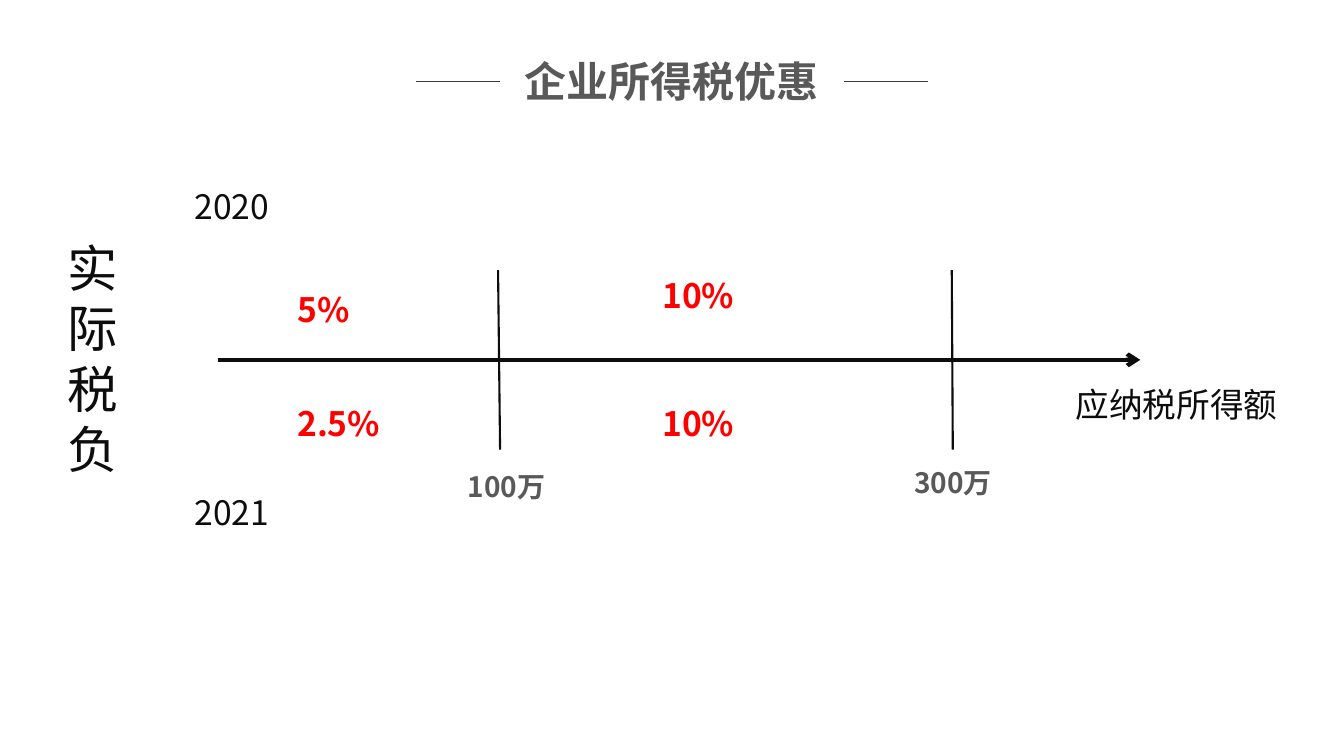
from lxml import etree
from pptx import Presentation
from pptx.dml.color import RGBColor
from pptx.enum.shapes import MSO_CONNECTOR
from pptx.enum.text import MSO_ANCHOR, MSO_AUTO_SIZE, PP_ALIGN
from pptx.oxml.ns import qn
from pptx.util import Inches, Pt

STRAIGHT = MSO_CONNECTOR.STRAIGHT
TOP = MSO_ANCHOR.TOP
NO_AUTOFIT = MSO_AUTO_SIZE.NONE
LEFT, CENTER = PP_ALIGN.LEFT, PP_ALIGN.CENTER

FONT = "Noto Sans CJK SC"
COLORS = {"ink": "0D0D0D", "heading": "595959", "rule": "3B3838", "rate": "FF0000"}

# Content: lengths in inches
SLIDE_W, SLIDE_H = 13.33, 7.5
HEADING = "企业所得税优惠"
BURDEN = "实际税负"
INCOME = "应纳税所得额"
YEARS = [("2020", 1.8), ("2021", 4.83)]  # label, top
THRESHOLDS = [  # label, left, top, tick top x, tick bottom x
    ("100万", 4.54, 4.61, 4.94, 4.96),
    ("300万", 8.97, 4.57, 9.44, 9.45),
]
RATES = [  # left of the income band, then (rate, top) for each year
    (2.85, [("5%", 2.82), ("2.5%", 3.95)]),
    (6.47, [("10%", 2.68), ("10%", 3.95)]),
]

HEADING_W, HEADING_H, HEADING_TOP = 3.15, 0.61, 0.5
RULE_W, RULE_GAP = 0.83, 0.13
AXIS_START, AXIS_END, AXIS_Y = 2.16, 11.31, 3.57
TICK_REACH = 0.89
LABEL_W, LABEL_H = 1.33, 0.5


def write(shape, text, size=24, color="ink", bold=False, align=LEFT, wrap=True):
    frame = shape.text_frame
    frame.word_wrap = wrap
    frame.auto_size = NO_AUTOFIT
    frame.vertical_anchor = TOP
    paragraph = frame.paragraphs[0]
    paragraph.alignment = align
    run = paragraph.add_run()
    run.text = text
    font = run.font
    font.size, font.bold, font.name = Pt(size), bold, FONT
    font.color.rgb = RGBColor.from_string(COLORS[color])
    etree.SubElement(run.font._element, qn("a:ea"), typeface=FONT)


def label(slide, text, left, top, width=LABEL_W, height=LABEL_H, **style):
    box = slide.shapes.add_textbox(Inches(left), Inches(top), Inches(width), Inches(height))
    write(box, text, **style)


def line(slide, start, end, color="ink", width=1.5, arrow=False):
    connector = slide.shapes.add_connector(STRAIGHT, *map(Inches, start + end))
    connector.line.color.rgb = RGBColor.from_string(COLORS[color])
    connector.line.width = Pt(width)
    if arrow:
        etree.SubElement(connector.line._get_or_add_ln(), qn("a:tailEnd"), type="arrow")
    etree.SubElement(connector._element.spPr, qn("a:effectLst"))


def add_heading(slide):
    left = (SLIDE_W - HEADING_W) / 2
    title = slide.shapes.title
    title.left, title.top = Inches(left), Inches(HEADING_TOP)
    title.width, title.height = Inches(HEADING_W), Inches(HEADING_H)
    write(title, HEADING, size=30, color="heading", bold=True, align=CENTER, wrap=False)
    rule_y = HEADING_TOP + HEADING_H / 2
    for start in (left - RULE_GAP - RULE_W, left + HEADING_W + RULE_GAP):
        line(slide, (start, rule_y), (start + RULE_W, rule_y), color="rule", width=0.5)


def add_axis(slide):
    line(slide, (AXIS_START, AXIS_Y), (AXIS_END, AXIS_Y), width=3, arrow=True)
    label(slide, INCOME, 10.57, 3.76, width=2.25)
    for text, left, top, upper_x, lower_x in THRESHOLDS:
        line(slide, (upper_x, AXIS_Y - TICK_REACH), (lower_x, AXIS_Y + TICK_REACH))
        label(slide, text, left, top, height=0.44, size=20, color="heading", bold=True)


def main():
    deck = Presentation()
    deck.slide_width, deck.slide_height = Inches(SLIDE_W), Inches(SLIDE_H)
    slide = deck.slides.add_slide(deck.slide_layouts.get_by_name("Title Only"))
    add_heading(slide)
    label(slide, BURDEN, 0.57, 2.3, width=0.67, height=2.52, size=36)
    add_axis(slide)
    for year, top in YEARS:
        label(slide, year, 1.83, top, width=0.99)
    for left, band in RATES:
        for rate, top in band:
            label(slide, rate, left, top, color="rate", bold=True)
    deck.save("out.pptx")


if __name__ == "__main__":
    main()
